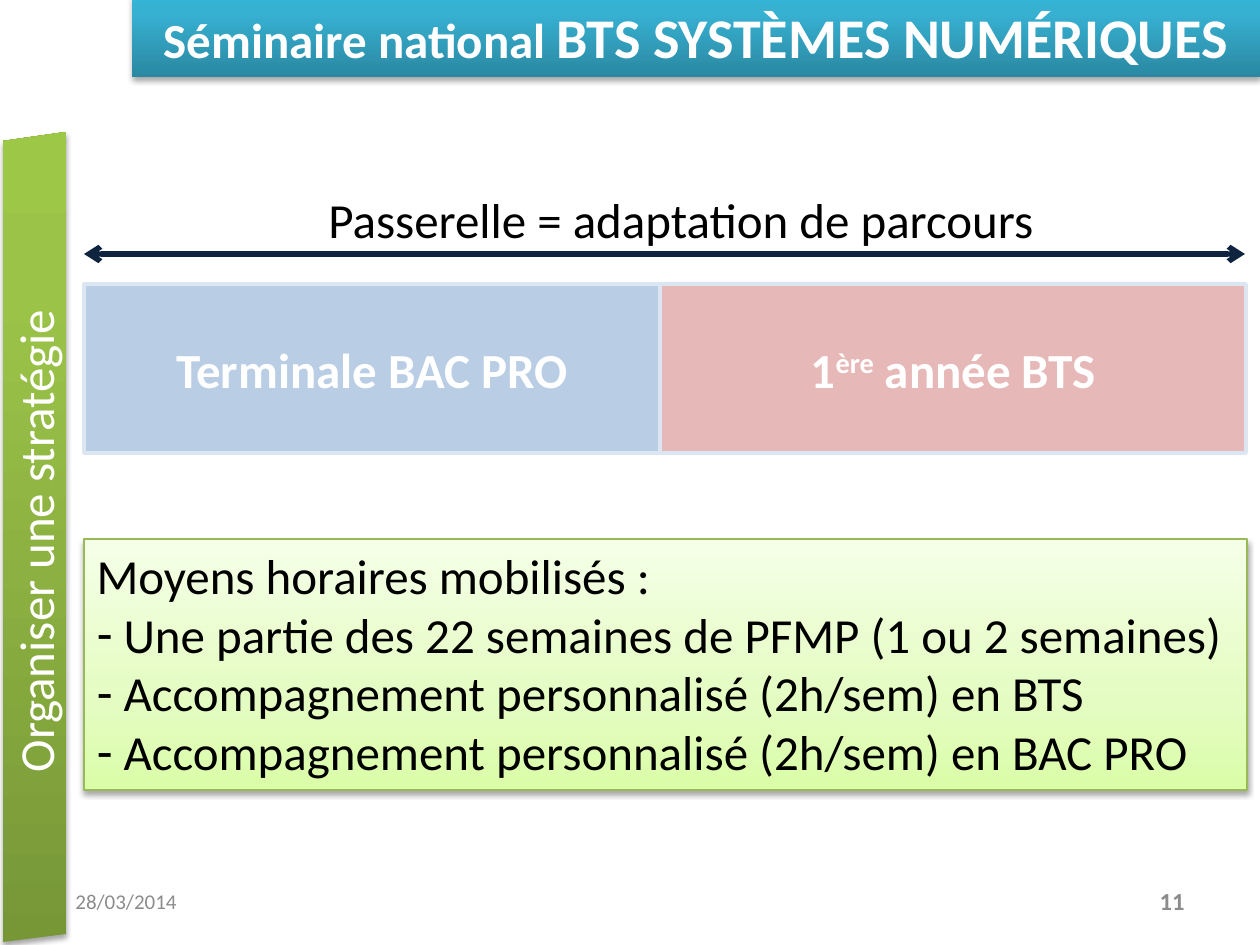
from dataclasses import dataclass

from lxml import etree
from copy import deepcopy
from pptx import Presentation
from pptx.dml.color import RGBColor
from pptx.enum.shapes import MSO_CONNECTOR, MSO_SHAPE
from pptx.enum.text import MSO_ANCHOR, MSO_AUTO_SIZE, PP_ALIGN
from pptx.oxml.ns import qn
from pptx.util import Emu, Pt

LEFT, CENTER, RIGHT = PP_ALIGN.LEFT, PP_ALIGN.CENTER, PP_ALIGN.RIGHT
TOP, MIDDLE = MSO_ANCHOR.TOP, MSO_ANCHOR.MIDDLE
NO_AUTOFIT = MSO_AUTO_SIZE.NONE
RECTANGLE = MSO_SHAPE.RECTANGLE
STRAIGHT = MSO_CONNECTOR.STRAIGHT

PX_PER_INCH = 126
EMU_PER_PX = 914400 / PX_PER_INCH
FONT = "Calibri"

WHITE = RGBColor(0xFF, 0xFF, 0xFF)
BLACK = RGBColor(0x00, 0x00, 0x00)
GREY = RGBColor(0x8C, 0x8C, 0x8C)
NAVY = RGBColor(0x0F, 0x24, 0x3E)
PALE_BLUE = RGBColor(0xDC, 0xE6, 0xF2)
BLUE = RGBColor(0xB9, 0xCD, 0xE5)
PINK = RGBColor(0xE6, 0xB9, 0xB8)
OLIVE = RGBColor(0x98, 0xB9, 0x55)

# Gradient stops run from the bottom edge to the top edge.
TEAL_GRADIENT = ((0, RGBColor(0x2A, 0x88, 0xA2)), (0.8, RGBColor(0x37, 0xB1, 0xD2)),
                 (1, RGBColor(0x34, 0xB4, 0xD6)))
GREEN_GRADIENT = ((0, RGBColor(0x77, 0x97, 0x37)), (0.8, RGBColor(0x9B, 0xC3, 0x48)),
                  (1, RGBColor(0x9D, 0xC7, 0x46)))
LIME_GRADIENT = ((0, RGBColor(0xDA, 0xFD, 0xA7)), (0.35, RGBColor(0xE4, 0xFC, 0xC2)),
                 (1, RGBColor(0xF5, 0xFF, 0xE7)))


@dataclass(frozen=True)
class Run:
    text: str
    size: int | None = None
    superscript: bool = False


@dataclass(frozen=True)
class Stage:
    left: int
    width: int
    color: RGBColor
    runs: tuple[Run, ...]


@dataclass(frozen=True)
class Label:
    box: tuple[int, int, int, int]
    text: str
    size: int
    color: RGBColor
    align: PP_ALIGN = LEFT
    bold: bool = False
    indent: int = 0


STAGES = (
    Stage(84, 576, BLUE, (Run("Terminale BAC PRO"),)),
    Stage(660, 586, PINK, (Run("1"), Run("ère", superscript=True), Run(" année BTS"))),
)
LABELS = (
    Label((63, 876, 294, 50), "28/03/2014", 12, GREY),
    Label((903, 876, 294, 50), "11", 14, GREY, RIGHT, True),
    Label((253, 183, 803, 72), "Passerelle = adaptation de parcours", 28, BLACK, indent=63),
)
BANNER_RUNS = (Run("Séminaire national ", 28), Run("BTS SYSTÈMES NUMÉRIQUES", 32))
RESOURCES_HEADING = "Moyens horaires mobilisés :"
RESOURCES = (
    "Une partie des 22 semaines de PFMP (1 ou 2 semaines)",
    "Accompagnement personnalisé (2h/sem) en BTS",
    "Accompagnement personnalisé (2h/sem) en BAC PRO",
)


def px(value: float) -> Emu:
    return Emu(round(value * EMU_PER_PX))


def place(shape, left: int, top: int, width: int, height: int) -> None:
    shape.left, shape.top, shape.width, shape.height = map(px, (left, top, width, height))


def fill_gradient(shape, stops) -> None:
    shape.fill.gradient()
    shape.fill.gradient_angle = 90
    stop_list = shape._element.spPr.find(".//" + qn("a:gsLst"))
    stop_list.append(deepcopy(stop_list[-1]))
    for gradient_stop, (position, color) in zip(shape.fill.gradient_stops, stops):
        gradient_stop.color.rgb = color
        gradient_stop.position = position


def add_shadow(shape) -> None:
    """Give the shape a soft black shadow just below it."""
    shape.shadow.inherit = False
    effects = shape._element.spPr.find(qn("a:effectLst"))
    shadow = etree.SubElement(effects, qn("a:outerShdw"), blurRad=str(Pt(3.1)),
                              dist=str(Pt(1.8)), dir="5400000", rotWithShape="0")
    color = etree.SubElement(shadow, qn("a:srgbClr"), val="000000")
    etree.SubElement(color, qn("a:alpha"), val="35000")


def set_frame(shape, anchor: MSO_ANCHOR):
    frame = shape.text_frame
    frame.word_wrap = True
    frame.auto_size = NO_AUTOFIT
    frame.vertical_anchor = anchor
    return frame


def format_paragraph(paragraph, size: int, color: RGBColor, align: PP_ALIGN = LEFT,
                     bold: bool = False) -> None:
    paragraph.alignment = align
    paragraph.space_before = Pt(0)
    font = paragraph.font
    font.name, font.size, font.bold = FONT, Pt(size), bold
    font.color.rgb = color


def add_runs(paragraph, runs: tuple[Run, ...]) -> None:
    for part in runs:
        run = paragraph.add_run()
        run.text = part.text
        if part.size:
            run.font.size = Pt(part.size)
        if part.superscript:
            run._r.get_or_add_rPr().set("baseline", "30000")


def set_indent(paragraph, margin: int, hanging: int = 0) -> None:
    properties = paragraph._p.get_or_add_pPr()
    properties.set("marL", str(px(margin)))
    properties.set("indent", str(px(-hanging)))


def format_banner(title) -> None:
    place(title, 132, -4, 1128, 81)
    fill_gradient(title, TEAL_GRADIENT)
    title.line.fill.background()
    add_shadow(title)
    paragraph = set_frame(title, TOP).paragraphs[0]
    format_paragraph(paragraph, 28, WHITE, CENTER, True)
    add_runs(paragraph, BANNER_RUNS)


def format_resources(body) -> None:
    place(body, 84, 539, 1163, 251)
    fill_gradient(body, LIME_GRADIENT)
    body.line.color.rgb = OLIVE
    body.line.width = Pt(0.75)
    add_shadow(body)
    frame = set_frame(body, TOP)
    for index, text in enumerate((RESOURCES_HEADING, *RESOURCES)):
        paragraph = frame.add_paragraph() if index else frame.paragraphs[0]
        paragraph.text = text
        margin = 27 if index else 0
        set_indent(paragraph, margin, margin)
        properties = paragraph._p.get_or_add_pPr()
        if index:
            etree.SubElement(properties, qn("a:buChar"), char="-")
        else:
            etree.SubElement(properties, qn("a:buNone"))
        format_paragraph(paragraph, 28, BLACK)


def add_side_bar(shapes) -> None:
    outline = shapes.build_freeform(3, 141, scale=EMU_PER_PX)
    outline.add_line_segments(((66, 132), (66, 934), (3, 942)))
    bar = outline.convert_to_shape()
    fill_gradient(bar, GREEN_GRADIENT)
    bar.line.fill.background()
    add_shadow(bar)
    frame = set_frame(bar, MIDDLE)
    frame.margin_top, frame.margin_bottom = px(8), px(0)
    frame._txBody.bodyPr.set("vert", "vert270")
    frame.text = "Organiser une stratégie"
    format_paragraph(frame.paragraphs[0], 28, WHITE, CENTER)


def add_stage(shapes, stage: Stage) -> None:
    block = shapes.add_shape(RECTANGLE, *map(px, (stage.left, 284, stage.width, 169)))
    block.shadow.inherit = False
    block.fill.solid()
    block.fill.fore_color.rgb = stage.color
    block.line.color.rgb = PALE_BLUE
    block.line.width = Pt(2)
    paragraph = set_frame(block, MIDDLE).paragraphs[0]
    format_paragraph(paragraph, 28, WHITE, CENTER, True)
    add_runs(paragraph, stage.runs)


def add_label(shapes, label: Label) -> None:
    frame = set_frame(shapes.add_textbox(*map(px, label.box)), MIDDLE)
    frame.text = label.text
    paragraph = frame.paragraphs[0]
    set_indent(paragraph, label.indent)
    format_paragraph(paragraph, label.size, label.color, label.align, label.bold)


def add_span_arrow(shapes) -> None:
    arrow = shapes.add_connector(STRAIGHT, *map(px, (84, 254, 1245, 254)))
    arrow.line.color.rgb = NAVY
    arrow.line.width = Pt(3)
    for end in ("a:headEnd", "a:tailEnd"):
        etree.SubElement(arrow.line._get_or_add_ln(), qn(end), type="arrow")
    etree.SubElement(arrow._element.spPr, qn("a:effectLst"))


def main() -> None:
    presentation = Presentation()
    presentation.slide_width, presentation.slide_height = px(1260), px(945)
    slide = presentation.slides.add_slide(presentation.slide_layouts[1])
    format_banner(slide.shapes.title)
    format_resources(slide.placeholders[1])
    add_side_bar(slide.shapes)
    for stage in STAGES:
        add_stage(slide.shapes, stage)
    add_span_arrow(slide.shapes)
    for label in LABELS:
        add_label(slide.shapes, label)
    presentation.save("out.pptx")


if __name__ == "__main__":
    main()
